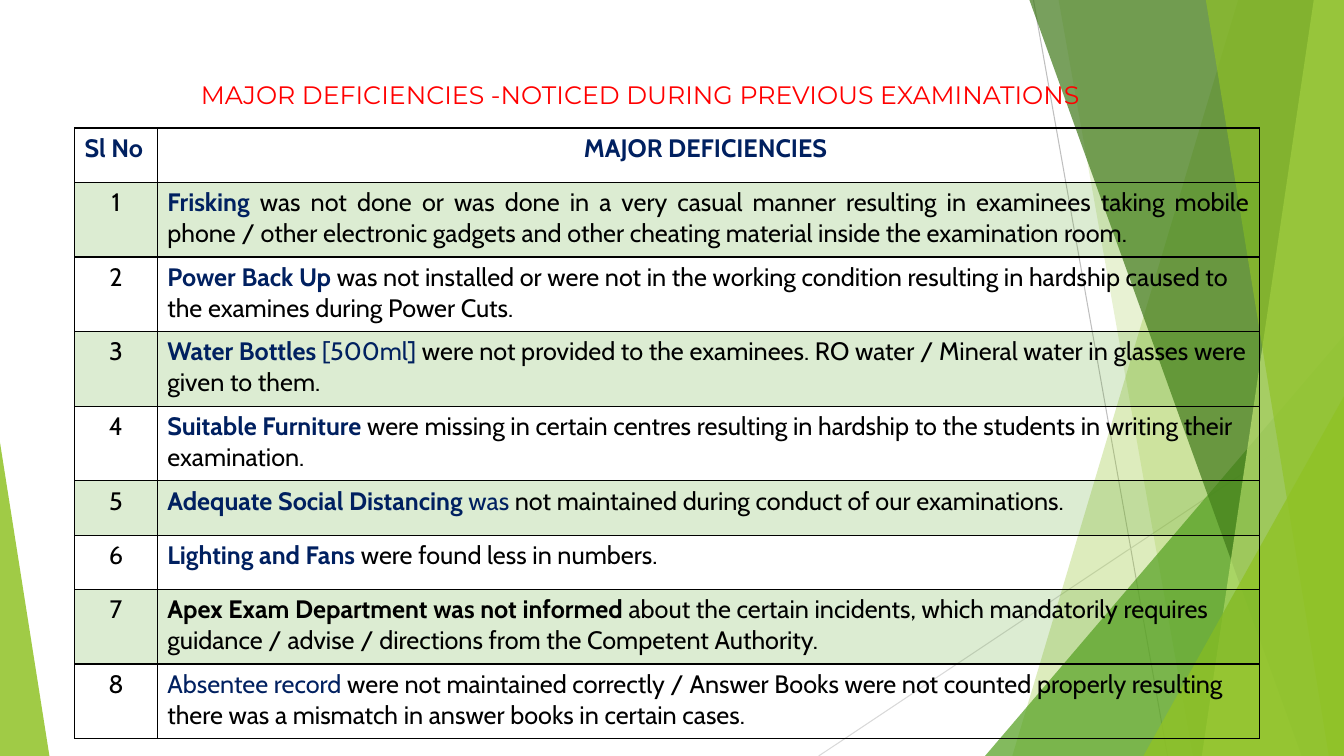
"""Build a slide with a table of deficiencies noticed during previous examinations."""
from lxml.etree import SubElement
from pptx import Presentation
from pptx.dml.color import RGBColor
from pptx.enum.shapes import MSO_CONNECTOR, MSO_SHAPE
from pptx.enum.text import MSO_ANCHOR, PP_ALIGN
from pptx.oxml import parse_xml
from pptx.oxml.ns import nsdecls, qn
from pptx.util import Inches, Pt

COLORS = {
    "lime": "90C226", "pale": "C0E474", "green": "54A021", "forest": "3F7819",
    "gray": "BFBFBF", "silver": "D9D9D9", "navy": "002060", "black": "000000",
    "red": "FF0000",
}


def tint(fill, holder, color, opacity):
    """Give a solid fill its colour and its opacity in percent."""
    fill.solid()
    fill.fore_color.rgb = RGBColor.from_string(COLORS[color])
    swatch = holder.find(qn("a:solidFill")).find(qn("a:srgbClr"))
    SubElement(swatch, qn("a:alpha")).set("val", str(opacity * 1000))


def write(para, text, font, color, bold=False):
    """Add one formatted span to a paragraph."""
    span = para.add_run()
    span.text = text
    formats = {"name": font, "size": Pt(18), "bold": bold}
    for name, value in formats.items():
        setattr(span.font, name, value)
    span.font.color.rgb = RGBColor.from_string(COLORS[color])


deck = Presentation()
deck.slide_width, deck.slide_height = Inches(13.33), Inches(7.5)
page = deck.slides.add_slide(deck.slide_layouts[6])

rays = [(10.25, 0, 11.58, 7.5, "gray"), (13.33, 4.03, 8.12, 7.5, "silver")]
for *ends, color in rays:
    ray = page.shapes.add_connector(MSO_CONNECTOR.STRAIGHT, *map(Inches, ends))
    ray.line.color.rgb = RGBColor.from_string(COLORS[color])
    ray.line.width = Pt(0.75)
    SubElement(ray._element.spPr, qn("a:effectLst"))

# Each band runs to the right edge; each wedge stands on the bottom edge.
facets = [
    ("band", 12.28, 10.04, "lime", 30),
    ("band", 10.5, 11.83, "lime", 20),
    ("wedge", 9.77, 13.33, 3.33, 1, "green", 72),
    ("band", 10.21, 12.91, "forest", 70),
    ("band", 13.03, 11.92, "pale", 70),
    ("band", 11.96, 13.18, "lime", 65),
    ("wedge", 11.34, 13.33, 3.93, 1, "lime", 80),
    ("wedge", 0, 0.49, 4.39, 0, "lime", 85),
]
for kind, *place, color, opacity in facets:
    if kind == "band":
        top_x, bottom_x = place
        outline = page.shapes.build_freeform(Inches(top_x), 0)
        corners = [(13.33, 0), (13.33, 7.5), (bottom_x, 7.5)]
        outline.add_line_segments([(Inches(x), Inches(y)) for x, y in corners])
        facet = outline.convert_to_shape()
    else:
        left, right, top, apex = place
        facet = page.shapes.add_shape(
            MSO_SHAPE.ISOSCELES_TRIANGLE, Inches(left), Inches(top),
            Inches(right - left), Inches(7.5 - top))
        facet.adjustments[0] = apex
    facet.shadow.inherit = False
    facet.line.fill.background()
    tint(facet.fill, facet._element.spPr, color, opacity)

title = page.shapes.add_textbox(Inches(0.74), Inches(0.67), Inches(11.22), Inches(0.48))
title.text_frame.word_wrap = True
title.text_frame.vertical_anchor = MSO_ANCHOR.MIDDLE
heading = title.text_frame.paragraphs[0]
for name, value in {"alignment": PP_ALIGN.CENTER, "line_spacing": 1.15,
                    "space_after": Pt(10)}.items():
    setattr(heading, name, value)
write(heading, "MAJOR DEFICIENCIES -NOTICED DURING PREVIOUS EXAMINATIONS", "Montserrat", "red")

deficiencies = [
    [("Frisking", "navy", True),
     (" was not done or was done in a very casual manner resulting in examinees taking mobile "
      "phone / other electronic gadgets and other cheating material inside the examination room.",
      "black", False)],
    [("Power Back Up ", "navy", True),
     ("was not installed or were not in the working condition resulting in hardship caused to "
      "the examines during Power Cuts.", "black", False)],
    [("Water Bottles ", "navy", True), ("[500ml] ", "navy", False),
     ("were not provided to the examinees. RO water / Mineral water in glasses were "
      "given to them.", "black", False)],
    [("Suitable Furniture ", "navy", True),
     ("were missing in certain centres resulting in hardship to the students in writing their "
      "examination.", "black", False)],
    [("Adequate Social Distancing", "navy", True), (" was", "navy", False),
     (" not maintained during conduct of our examinations.", "black", False)],
    [("Lighting and Fans ", "navy", True),
     ("were found less in numbers.", "black", False)],
    [("Apex Exam Department was not informed ", "black", True),
     ("about the certain incidents, which mandatorily requires guidance / advise / directions "
      "from the Competent Authority.", "black", False)],
    [("Absentee record ", "navy", False),
     ("were not maintained correctly / Answer Books were not counted properly resulting "
      "there was a mismatch in answer books in certain cases.", "black", False)],
]
rows = [([("Sl No", "navy", True)], [("MAJOR DEFICIENCIES ", "navy", True)])]
for number, deficiency in enumerate(deficiencies, 1):
    rows.append(([(str(number), "black", False)], deficiency))

short_rows = {0, 5, 6}
heights = [0.54 if index in short_rows else 0.74 for index in range(len(rows))]
table = page.shapes.add_table(len(rows), 2, Inches(0.74), Inches(1.27),
                              Inches(11.75), Inches(sum(heights))).table
table.first_row = table.horz_banding = False
for column, width in zip(table.columns, (0.82, 10.93)):
    column.width = Inches(width)

for row_index, row in enumerate(rows):
    table.rows[row_index].height = Inches(heights[row_index])
    for column_index, spans in enumerate(row):
        cell = table.cell(row_index, column_index)
        para = cell.text_frame.paragraphs[0]
        if (row_index == 0) != (column_index == 0):
            para.alignment = PP_ALIGN.CENTER
        elif (row_index, column_index) == (1, 1):
            para.alignment = PP_ALIGN.JUSTIFY
        for text, color, bold in spans:
            write(para, text, "Cabin", color, bold)
        properties = cell._tc.get_or_add_tcPr()
        if row_index % 2:
            tint(cell.fill, properties, "green", 20)
        else:
            cell.fill.background()
        for position, side in enumerate("LRTB"):
            properties.insert(position, parse_xml(
                f'<a:ln{side} {nsdecls("a")} w="12700"><a:solidFill>'
                f'<a:srgbClr val="{COLORS["black"]}"/></a:solidFill></a:ln{side}>'))

deck.save("out.pptx")
